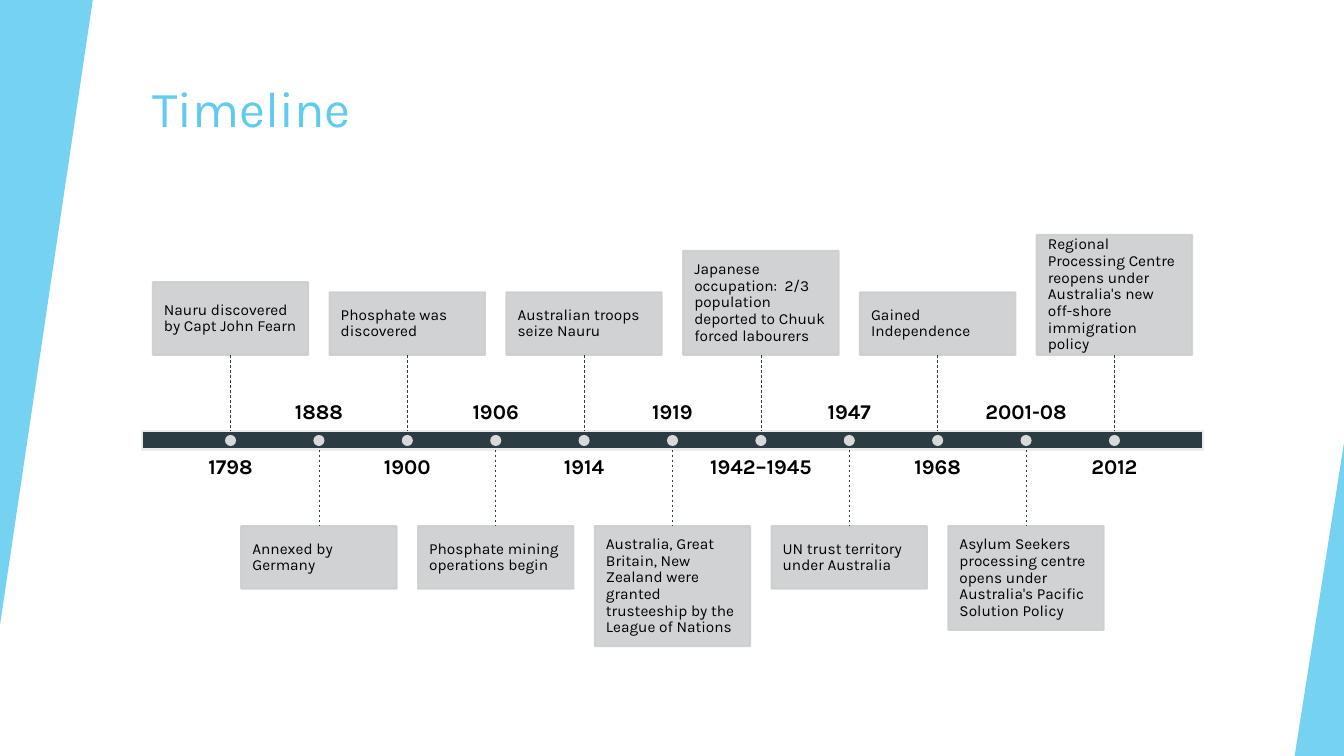
import pptx
import pptx.util
import pptx.dml.color
import pptx.enum.dml
import pptx.enum.shapes
import pptx.enum.text
import pptx.oxml.ns
from lxml import etree
from pptx.util import Inches

theme = {
    "font": "Karla",
    "sky": "5FCBEF",
    "slate": "2C3C43",
    "card": "CDCECF",
    "pale": "EBEBEB",
    "text": "000000",
    "title_size": 36,
    "year_size": 15,
    "event_size": 11,
}

events = [
    ("1798", "Nauru discovered by Capt John Fearn", 0.72),
    ("1888", "Annexed by Germany", 0.62),
    ("1900", "Phosphate was discovered", 0.62),
    ("1906", "Phosphate mining operations begin", 0.62),
    ("1914", "Australian troops seize Nauru", 0.62),
    ("1919", "Australia, Great Britain, New Zealand were granted trusteeship by the League of Nations", 1.19),
    ("1942–1945", "Japanese occupation:  2/3 population deported to Chuuk forced labourers", 1.03),
    ("1947", "UN trust territory under Australia", 0.62),
    ("1968", "Gained Independence", 0.62),
    ("2001-08", "Asylum Seekers processing centre opens under Australia's Pacific Solution Policy", 1.03),
    ("2012", "Regional Processing Centre reopens under Australia's new off-shore immigration policy", 1.19),
]

deck = pptx.Presentation()
deck.slide_width = Inches(13.33)
deck.slide_height = Inches(7.5)
page = deck.slides.add_slide(deck.slide_layouts[6])
shape_types = pptx.enum.shapes.MSO_SHAPE
anchors = pptx.enum.text.MSO_ANCHOR
alignments = pptx.enum.text.PP_ALIGN


def add_block(kind, left, top, width, height, fill, opacity=100, outline=None):
    block = page.shapes.add_shape(kind, Inches(left), Inches(top), Inches(width), Inches(height))
    block.shadow.inherit = False
    block.fill.solid()
    block.fill.fore_color.rgb = pptx.dml.color.RGBColor.from_string(fill)
    if outline:
        block.line.fill.solid()
        block.line.color.rgb = pptx.dml.color.RGBColor.from_string(outline)
        block.line.width = pptx.util.Pt(1.5)
    else:
        block.line.fill.background()
    if opacity < 100:
        for color in block.element.spPr.iter(pptx.oxml.ns.qn("a:srgbClr")):
            etree.SubElement(color, pptx.oxml.ns.qn("a:alpha"), val=str(opacity * 1000))
    return block


def write_text(box, text, size, color, anchor, align, inset, bold=False, spacing=0.9):
    frame = box.text_frame
    frame.word_wrap = True
    frame.vertical_anchor = anchor
    frame.margin_left = frame.margin_right = Inches(inset)
    frame.margin_top = frame.margin_bottom = Inches(inset)
    para = frame.paragraphs[0]
    para.alignment = align
    para.line_spacing = spacing
    span = para.add_run()
    span.text = text
    span.font.name = theme["font"]
    span.font.size = pptx.util.Pt(size)
    span.font.bold = bold
    span.font.color.rgb = pptx.dml.color.RGBColor.from_string(color)


title = page.shapes.add_textbox(Inches(1.41), Inches(0.67), Inches(11.15), Inches(1.2))
write_text(title, "Timeline", theme["title_size"], theme["sky"], anchors.TOP, alignments.LEFT, 0.1, spacing=1.0)

left_wedge = add_block(shape_types.ISOSCELES_TRIANGLE, 0, 0, 0.92, 6.2, theme["sky"], 85)
left_wedge.rotation = 180
right_wedge = add_block(shape_types.ISOSCELES_TRIANGLE, 12.84, 4.39, 0.49, 3.11, theme["sky"], 85)
for wedge in (left_wedge, right_wedge):
    wedge.adjustments[0] = 1.0

bar_left, bar_top, bar_width, bar_height = 1.41, 4.28, 10.52, 0.18
bar_bottom = bar_top + bar_height
step = bar_width / (len(events) + 1)
card_width, year_width, year_height, dot_size = 1.54, 1.4, 0.51, 0.11
upper_card_bottom, lower_card_top = 3.52, 5.22
upper_year_top, lower_year_top = 3.7, 4.53

add_block(shape_types.RECTANGLE, bar_left, bar_top, bar_width, bar_height, theme["slate"], outline=theme["pale"])

for index, (year, event, card_height) in enumerate(events):
    center = bar_left + step * (index + 1)
    if index % 2 == 0:
        card_top = upper_card_bottom - card_height
        stem_top, stem_bottom = upper_card_bottom, bar_top
        year_top, year_anchor = lower_year_top, anchors.TOP
    else:
        card_top = lower_card_top
        stem_top, stem_bottom = bar_bottom, lower_card_top
        year_top, year_anchor = upper_year_top, anchors.BOTTOM

    year_box = page.shapes.add_textbox(
        Inches(center - year_width / 2), Inches(year_top), Inches(year_width), Inches(year_height))
    write_text(year_box, year, theme["year_size"], theme["text"], year_anchor, alignments.CENTER, 0, bold=True)

    card = add_block(shape_types.RECTANGLE, center - card_width / 2, card_top, card_width, card_height,
                     theme["card"], 90, theme["card"])
    write_text(card, event, theme["event_size"], theme["text"], anchors.MIDDLE, alignments.LEFT, 0.11)

    stem = page.shapes.add_connector(
        pptx.enum.shapes.MSO_CONNECTOR.STRAIGHT,
        Inches(center), Inches(stem_top), Inches(center), Inches(stem_bottom))
    stem.line.color.rgb = pptx.dml.color.RGBColor.from_string(theme["slate"])
    stem.line.width = pptx.util.Pt(0.5)
    stem.line.dash_style = pptx.enum.dml.MSO_LINE.DASH
    etree.SubElement(stem.element.spPr, pptx.oxml.ns.qn("a:effectLst"))

    add_block(shape_types.OVAL, center - dot_size / 2, bar_top + (bar_height - dot_size) / 2,
              dot_size, dot_size, theme["pale"], 90)

deck.save("out.pptx")
